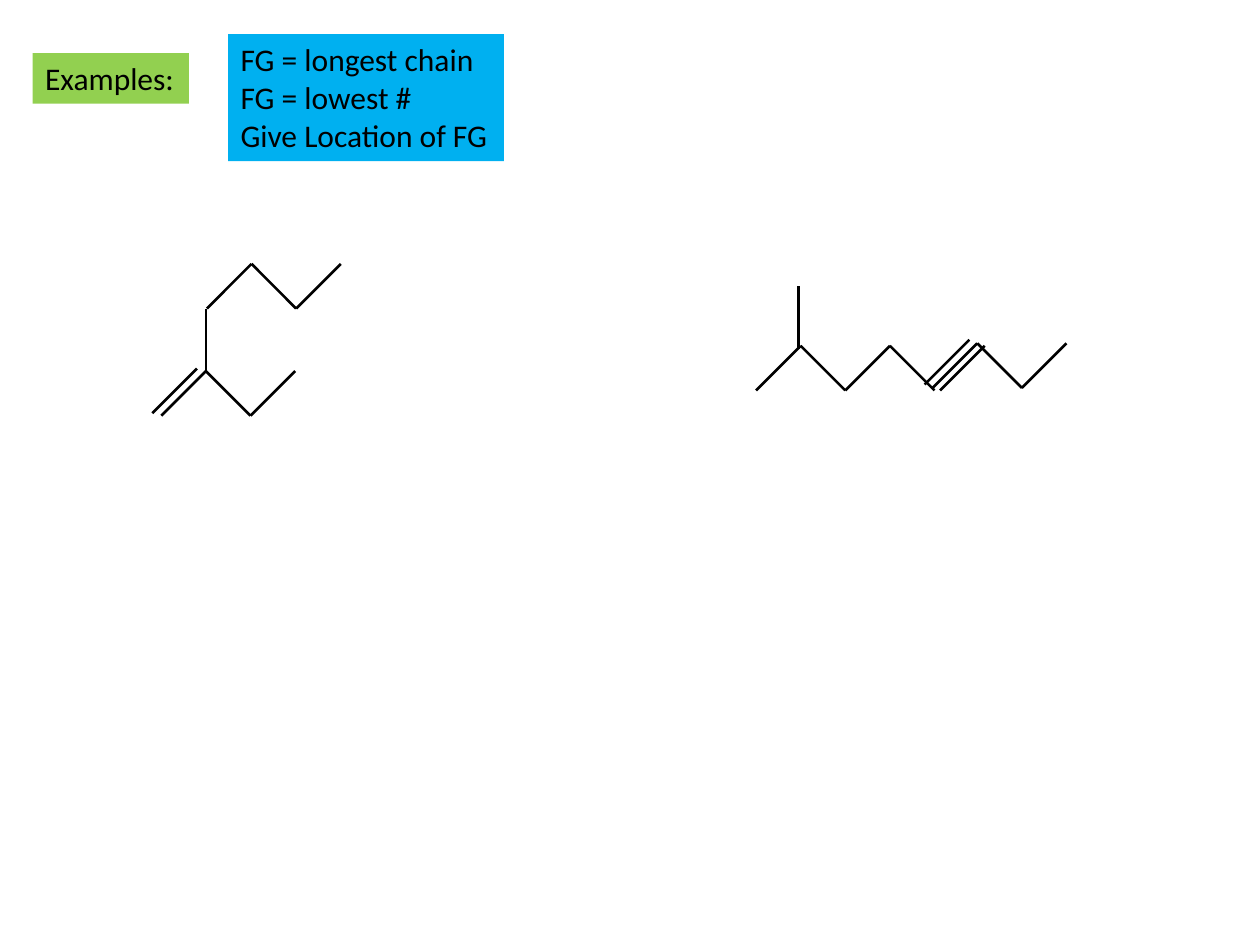
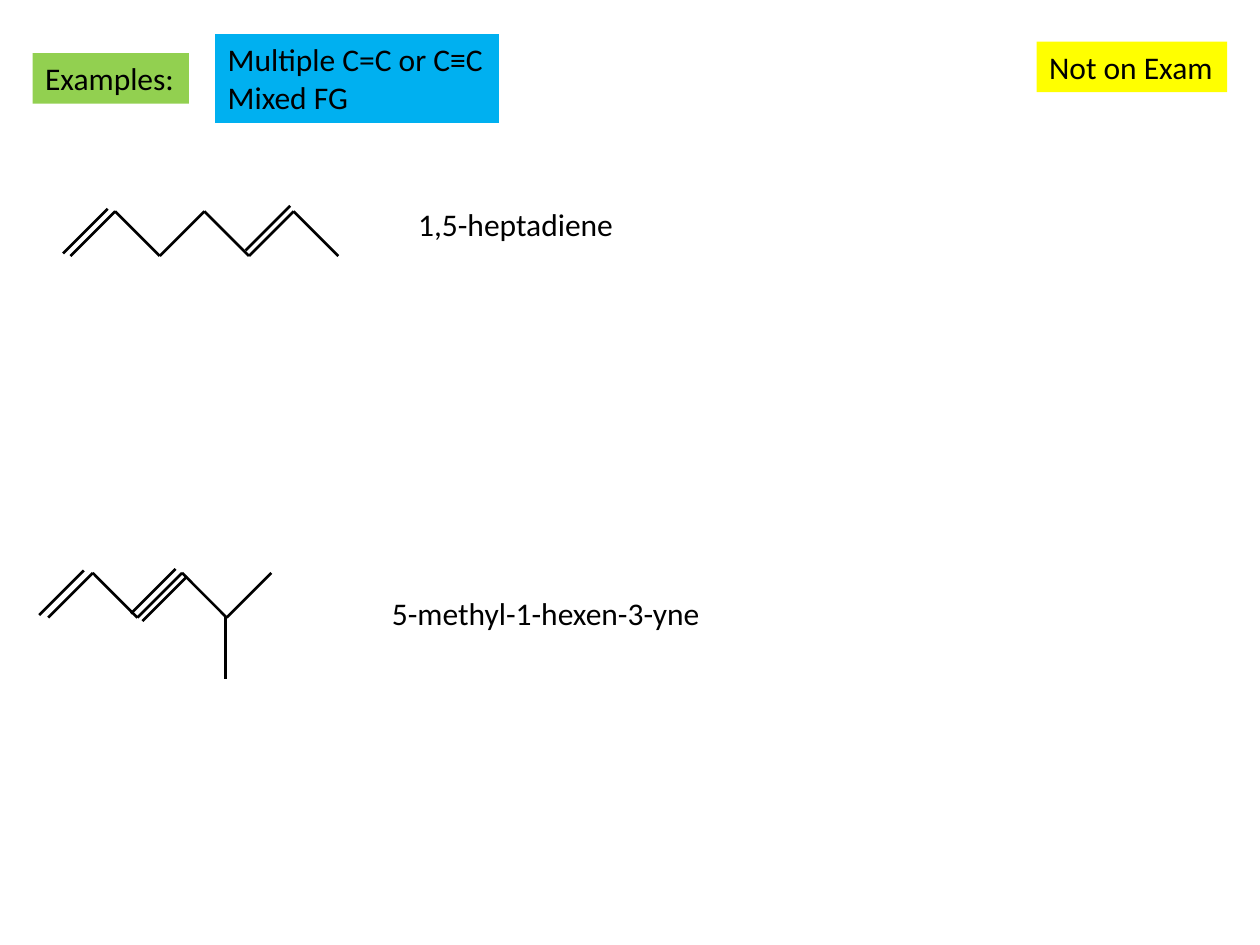
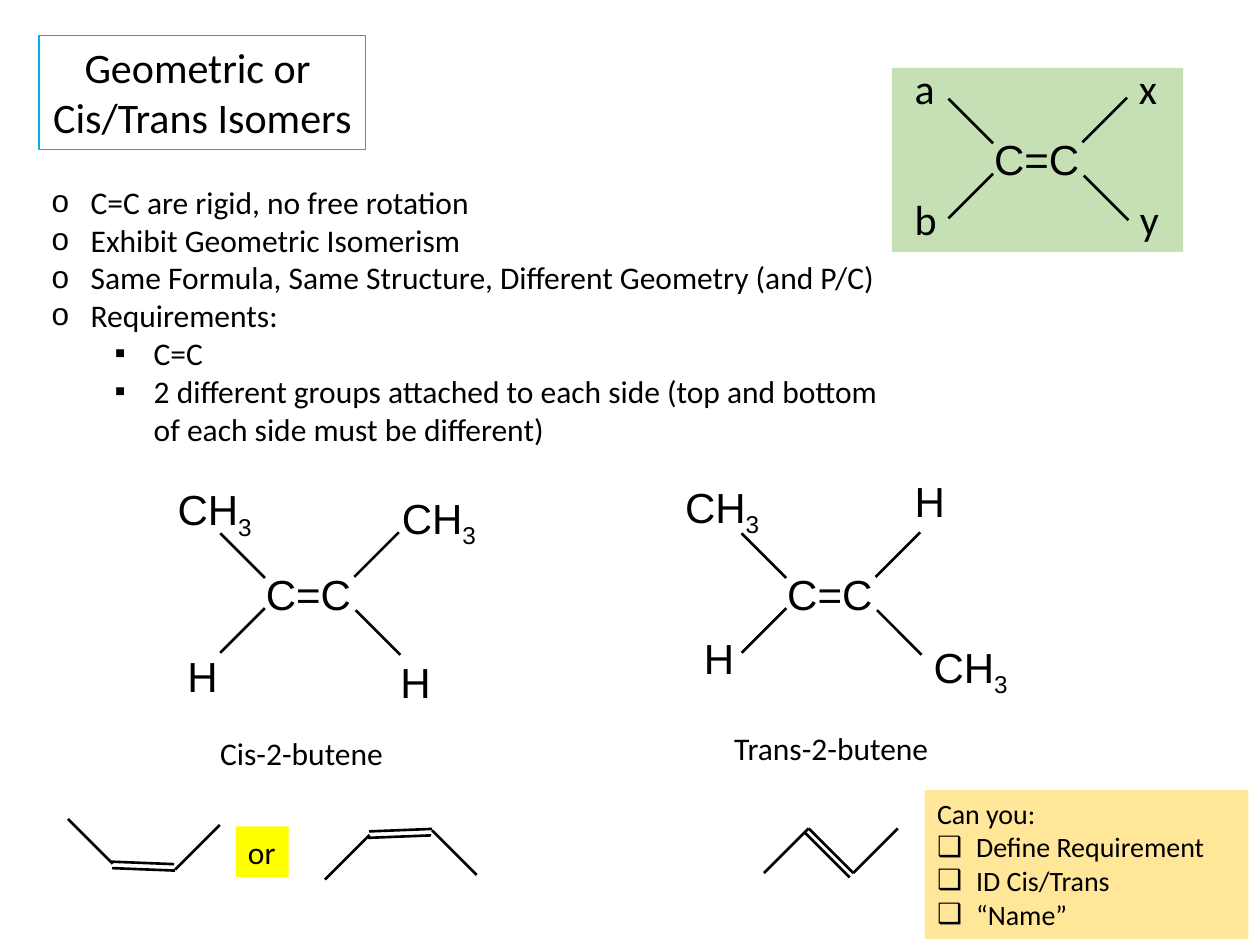
"""Build three slides on naming alkenes and alkynes and on cis/trans isomers."""
from dataclasses import dataclass
from typing import NamedTuple

from lxml import etree
from pptx import Presentation
from pptx.dml.color import RGBColor
from pptx.enum.shapes import MSO_CONNECTOR, MSO_SHAPE
from pptx.enum.text import MSO_AUTO_SIZE, PP_ALIGN
from pptx.oxml.ns import qn
from pptx.util import Cm, Pt

STRAIGHT = MSO_CONNECTOR.STRAIGHT
RECTANGLE = MSO_SHAPE.RECTANGLE
GROW = MSO_AUTO_SIZE.SHAPE_TO_FIT_TEXT
LEFT, CENTER = PP_ALIGN.LEFT, PP_ALIGN.CENTER

BLACK, GREEN, BLUE, YELLOW = "000000", "92D050", "00B0F0", "FFFF00"
PALE_GREEN, PALE_ORANGE = "C5E0B4", "FFE699"
BODY, FORMULA = "Calibri", "Arial"
HANG = 0.79

STEPS = {
    "U": (0.9, -0.9),
    "D": (0.9, 0.9),
    "V": (0, 1.27),
    "f": (1.27, 0.05),
    "r": (1.27, -0.05),
}


class Chain(NamedTuple):
    """Consecutive bonds from a start point, one step letter each."""
    x: float
    y: float
    steps: str


class Line(NamedTuple):
    """One paragraph; text after an underscore is a subscript."""
    text: str
    bullet: str = ""
    level: int = 0


@dataclass(frozen=True)
class Box:
    """A text box with its place and style."""
    x: float
    y: float
    w: float
    h: float
    lines: tuple[Line, ...]
    fill: str = ""
    border: str = ""
    size: int = 18
    font: str = BODY
    align: PP_ALIGN = LEFT
    wrap: bool = False


def rgb(color: str) -> RGBColor:
    """Turn a hex string into a colour."""
    return RGBColor.from_string(color)


def lines(*texts: str, bullet: str = "", level: int = 0) -> tuple[Line, ...]:
    """Make paragraphs that share a bullet and a level."""
    return tuple(Line(text, bullet, level) for text in texts)


def label(x: float, y: float, w: float, *texts: str, fill: str = "") -> Box:
    """Describe an 18 point label as tall as its lines."""
    return Box(x, y, w, 0.25 + 0.77 * len(texts), lines(*texts), fill)


def formula(x: float, y: float, w: float, text: str, font: str = FORMULA) -> Box:
    """Describe a 24 point atom or group."""
    return Box(x, y, w, 1.27, lines(text), size=24, font=font)


def add_bullet(p, line: Line) -> None:
    """Give a paragraph a hanging bullet."""
    pPr = p._p.get_or_add_pPr()
    pPr.set("marL", str(Cm(HANG + 1.27 * line.level)))
    pPr.set("indent", str(-Cm(HANG)))
    font = etree.Element(qn("a:buFont"), typeface=FORMULA)
    char = etree.Element(qn("a:buChar"), char=line.bullet)
    pPr.insert(0, font)
    font.addnext(char)


def draw_box(shapes, box: Box) -> None:
    """Draw a text box."""
    sp = shapes.add_textbox(Cm(box.x), Cm(box.y), Cm(box.w), Cm(box.h))
    if box.fill:
        sp.fill.solid()
        sp.fill.fore_color.rgb = rgb(box.fill)
    if box.border:
        sp.line.color.rgb = rgb(box.border)
        sp.line.width = Pt(0.75)
    tf = sp.text_frame
    tf.word_wrap = box.wrap
    tf.auto_size = GROW
    for i, line in enumerate(box.lines):
        p = tf.add_paragraph() if i else tf.paragraphs[0]
        p.alignment = box.align
        p.level = line.level
        p.font.name = box.font
        p.font.size = Pt(box.size)
        p.font.color.rgb = rgb(BLACK)
        if line.bullet:
            add_bullet(p, line)
        base, _, sub = line.text.partition("_")
        p.add_run().text = base
        if sub:
            r = p.add_run()
            r.text = sub
            r._r.get_or_add_rPr().set("baseline", "-25000")


def draw_bonds(shapes, *chains: Chain) -> None:
    """Draw every bond of the chains."""
    for chain in chains:
        x, y = chain.x, chain.y
        for step in chain.steps:
            dx, dy = STEPS[step]
            cxn = shapes.add_connector(STRAIGHT, Cm(x), Cm(y), Cm(x + dx), Cm(y + dy))
            cxn.line.color.rgb = rgb(BLACK)
            cxn.line.width = Pt(1.5)
            etree.SubElement(cxn._element.spPr, qn("a:effectLst"))
            x, y = x + dx, y + dy


def draw_molecule(shapes, *chains: Chain) -> None:
    """Draw a skeletal structure as one group."""
    draw_bonds(shapes.add_group_shape().shapes, *chains)


def draw_double_bond(shapes, x: float, y: float) -> None:
    """Draw C=C with its four arms."""
    draw_box(shapes, formula(x, y, 2.26, "C=C"))
    draw_bonds(
        shapes,
        Chain(x + 2.03, y + 0.3, "U"),
        Chain(x + 2.06, y + 0.97, "D"),
        Chain(x - 0.67, y - 0.58, "D"),
        Chain(x - 0.67, y + 1.83, "U"),
    )


def build_naming(shapes) -> None:
    """Fill the slide on the naming rules."""
    draw_box(shapes, label(0.66, 1.07, 3.15, "Examples:", fill=GREEN))
    draw_box(shapes, label(4.6, 0.69, 5.56, "FG = longest chain", "FG = lowest #",
                           "Give Location of FG", fill=BLUE))
    draw_molecule(shapes, Chain(3.25, 8.38, "UDU"), Chain(3.07, 8.33, "U"),
                  Chain(4.15, 6.22, "V"), Chain(4.17, 6.22, "UDU"))
    draw_molecule(shapes, Chain(15.24, 7.87, "UDUD"), Chain(18.8, 7.82, "UDU"),
                  Chain(18.64, 7.75, "U"), Chain(18.95, 7.87, "U"),
                  Chain(16.1, 5.77, "V"))


def build_mixed(shapes) -> None:
    """Fill the slide on several functional groups."""
    for box in (
        label(0.66, 1.07, 3.15, "Examples:", fill=GREEN),
        label(20.9, 0.84, 3.84, "Not on Exam", fill=YELLOW),
        label(4.34, 0.69, 5.72, "Multiple C=C or C≡C", "Mixed FG", fill=BLUE),
        label(8.18, 4.01, 4.5, "1,5-heptadiene"),
        label(7.65, 11.86, 6.78, "5-methyl-1-hexen-3-yne"),
    ):
        draw_box(shapes, box)
    draw_bonds(
        shapes,
        Chain(1.42, 5.16, "UDUDUD"), Chain(1.27, 5.11, "U"), Chain(4.95, 5.05, "U"),
        Chain(0.97, 12.45, "UDUDU"), Chain(0.79, 12.4, "U"), Chain(2.64, 12.37, "U"),
        Chain(2.87, 12.52, "U"), Chain(4.55, 12.42, "V"),
    )


def draw_model(shapes) -> None:
    """Draw the general alkene on its green panel."""
    group = shapes.add_group_shape().shapes
    sp = group.add_shape(RECTANGLE, Cm(17.98), Cm(1.37), Cm(5.87), Cm(3.71))
    sp.shadow.inherit = False
    sp.fill.solid()
    sp.fill.fore_color.rgb = rgb(PALE_GREEN)
    sp.line.fill.background()
    draw_double_bond(group, 19.79, 2.57)
    for x, y, text in ((18.19, 1.14, "a"), (18.19, 3.78, "b"),
                       (22.73, 3.78, "y"), (22.71, 1.14, "x")):
        draw_box(group, formula(x, y, 0.91, text, BODY))


def build_isomers(shapes) -> None:
    """Fill the slide on geometric isomers."""
    facts = lines("C=C are rigid, no free rotation", "Exhibit Geometric Isomerism",
                  "Same Formula, Same Structure, Different Geometry (and P/C)",
                  "Requirements:", bullet="o")
    needs = lines("C=C", "2 different groups attached to each side "
                  "(top and bottom of each side must be different)", bullet="▪", level=1)
    checks = lines("Define Requirement", "ID Cis/Trans", "“Name”", bullet="❑")
    for box in (
        Box(0.79, 0.71, 6.58, 2.31, lines("Geometric or ", "Cis/Trans Isomers"),
            border=BLUE, size=24, align=CENTER),
        Box(18.64, 15.93, 6.53, 3, lines("Can you:") + checks,
            fill=PALE_ORANGE, size=16, wrap=True),
        Box(0.79, 3.56, 17.2, 6.4, facts + needs, wrap=True),
        label(4.19, 14.68, 3.84, "Cis-2-butene"),
        label(14.55, 14.58, 4.47, "Trans-2-butene"),
        label(4.75, 16.66, 1.07, "or", fill=YELLOW),
    ):
        draw_box(shapes, box)
    for x in (5.11, 15.62):
        draw_double_bond(shapes, x, 11.33)
    draw_model(shapes)
    for x, y in ((7.85, 9.8), (13.56, 9.58), (18.57, 12.8), (3.33, 9.63)):
        draw_box(shapes, formula(x, y, 2.06, "CH_3"))
    for x, y in ((3.53, 12.98), (7.82, 13.11), (13.94, 12.62), (18.19, 9.47)):
        draw_box(shapes, formula(x, y, 1.14, "H"))
    draw_molecule(shapes, Chain(15.4, 17.6, "UDU"), Chain(16.23, 16.79, "D"))
    draw_bonds(shapes, Chain(1.37, 16.51, "D"), Chain(2.24, 17.37, "f"),
               Chain(2.26, 17.5, "f"), Chain(3.53, 17.53, "U"))
    draw_molecule(shapes, Chain(6.55, 17.73, "U"), Chain(7.42, 16.89, "r"),
                  Chain(7.44, 16.76, "r"), Chain(8.71, 16.74, "D"))


def main() -> None:
    """Build and save the presentation."""
    prs = Presentation()
    prs.slide_width, prs.slide_height = Cm(25.4), Cm(19.05)
    for build in (build_naming, build_mixed, build_isomers):
        s = prs.slides.add_slide(prs.slide_layouts[6])
        build(s.shapes)
    prs.save("out.pptx")


if __name__ == "__main__":
    main()
